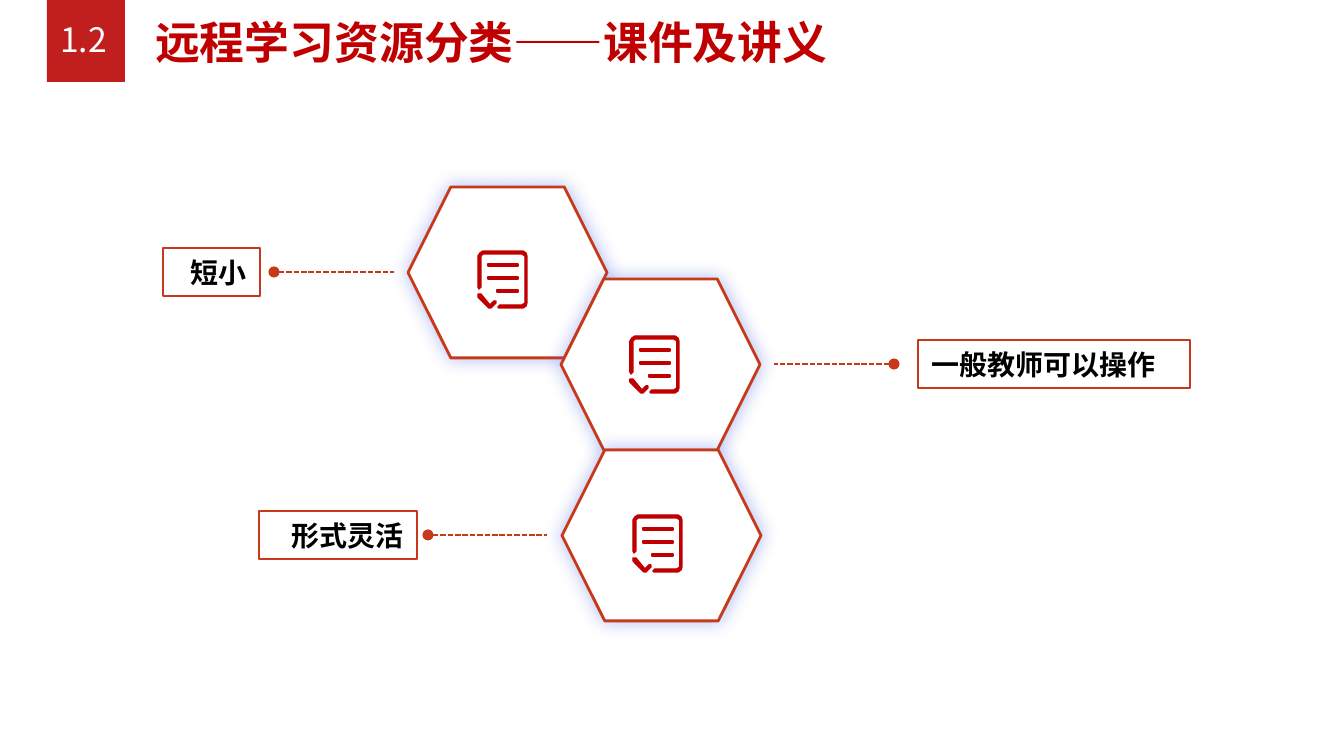
from lxml import etree
from pptx import Presentation
from pptx import util as u
from pptx.dml.color import RGBColor
from pptx.enum import dml, shapes, text
from pptx.oxml import ns

PX = u.Inches(10) / 1344
FONT = "Noto Sans CJK SC"
COLORS = {"white": "FFFFFF", "black": "000000", "title": "C00000",
          "badge": "C11E1E", "outline": "C73A19", "glow": "3C5CE8"}


def px(*lengths):
    return [u.Emu(round(length * PX)) for length in lengths]


def add_box(box, wording, size, color, bold, align, fill=None, outline=None):
    """Add a rectangle with one line of text, centred vertically."""
    shape = slide.shapes.add_shape(shapes.MSO_SHAPE.RECTANGLE, *px(*box))
    shape.shadow.inherit = False
    for part, part_color in ((shape.fill, fill), (shape.line.fill, outline)):
        if part_color:
            part.solid()
            part.fore_color.rgb = RGBColor.from_string(COLORS[part_color])
        else:
            part.background()
    if outline:
        shape.line.width = u.Pt(0.75)
    frame = shape.text_frame
    frame_format = {"word_wrap": True, "margin_top": 0, "margin_bottom": 0,
                    "vertical_anchor": text.MSO_ANCHOR.MIDDLE}
    for name, value in frame_format.items():
        setattr(frame, name, value)
    paragraph = frame.paragraphs[0]
    paragraph.alignment = align
    run = paragraph.add_run()
    run.text = wording
    run_format = {"name": FONT, "size": u.Pt(size), "bold": bold}
    for name, value in run_format.items():
        setattr(run.font, name, value)
    run.font.color.rgb = RGBColor.from_string(COLORS[color])
    etree.SubElement(run.font._element, ns.qn("a:ea"), typeface=FONT)


presentation = Presentation()
presentation.slide_width, presentation.slide_height = px(1344, 756)
slide = presentation.slides.add_slide(presentation.slide_layouts[6])
slide.background.fill.solid()
slide.background.fill.fore_color.rgb = RGBColor.from_string(COLORS["white"])

# Title and section number
JUSTIFY, LEFT, RIGHT = (text.PP_ALIGN.JUSTIFY, text.PP_ALIGN.LEFT,
                        text.PP_ALIGN.RIGHT)
add_box((142, 8, 981, 67), "远程学习资源分类——课件及讲义", 24, "title", True, JUSTIFY)
add_box((47, -3, 78, 85), "1.2", 18, "white", False, JUSTIFY, fill="badge")

# Document icon: page outline, three text lines and a check mark
ICON = [
    [(21, 57), (45, 57), (48, 55), (49, 52), (49, 5), (48, 2), (45, 0),
     (5, 0), (2, 2), (0, 5), (0, 36), (1, 38), (3, 36), (3, 5), (5, 3),
     (44, 3), (47, 5), (47, 52), (44, 54), (22, 54), (20, 56)],
    [(0, 43), (3, 43), (12, 54), (16, 50), (18, 50), (18, 52), (13, 57),
     (11, 57), (0, 46)],
]
for left, top in ((10, 13), (10, 26), (19, 39)):
    ICON.append([(left, top), (40, top), (40, top + 2), (left, top + 2)])

# Hexagon corner, icon corner, dot x, line end x, label x and width, wording
ROWS = [
    ((408, 187), (478, 251), 274, 394, 163, 97, "短小", RIGHT),
    ((561, 279), (630, 336), 894, 774, 918, 272, "一般教师可以操作", LEFT),
    ((562, 450), (633, 515), 428, 547, 259, 158, "形式灵活", RIGHT),
]
HEX_WIDTH, HEX_HEIGHT, LABEL_HEIGHT = 199, 171, 48

for hex_corner, icon_corner, dot, end, label, width, wording, align in ROWS:
    middle = hex_corner[1] + HEX_HEIGHT // 2

    # Hexagon with a soft glow-like shadow
    hexagon = slide.shapes.add_shape(
        shapes.MSO_SHAPE.HEXAGON, *px(*hex_corner, HEX_WIDTH, HEX_HEIGHT))
    hexagon.fill.solid()
    hexagon.fill.fore_color.rgb = RGBColor.from_string(COLORS["white"])
    hexagon.line.color.rgb = RGBColor.from_string(COLORS["outline"])
    hexagon.line.width = u.Pt(1.5)
    hexagon.shadow.inherit = False
    effects = hexagon._element.spPr.find(ns.qn("a:effectLst"))
    shadow = etree.SubElement(effects, ns.qn("a:outerShdw"), algn="ctr",
                              blurRad=str(u.Pt(10)), dist="0", dir="0",
                              rotWithShape="0")
    glow = etree.SubElement(shadow, ns.qn("a:srgbClr"), val=COLORS["glow"])
    etree.SubElement(glow, ns.qn("a:alpha"), val="40000")

    # Dashed pointer with a dot beside the label
    pointer = slide.shapes.add_connector(
        shapes.MSO_CONNECTOR.STRAIGHT, *px(dot, middle, end, middle))
    pointer.line.color.rgb = RGBColor.from_string(COLORS["outline"])
    pointer.line.width = u.Pt(1)
    pointer.line.dash_style = dml.MSO_LINE.SQUARE_DOT
    etree.SubElement(pointer.line._get_or_add_ln(), ns.qn("a:headEnd"),
                     type="oval")
    etree.SubElement(pointer._element.spPr, ns.qn("a:effectLst"))

    # Label
    add_box((label, middle - LABEL_HEIGHT // 2, width, LABEL_HEIGHT),
            wording, 15, "black", True, align, outline="outline")

    # Icon
    x, y = icon_corner
    contours = [[(x + dx, y + dy) for dx, dy in contour] for contour in ICON]
    builder = slide.shapes.build_freeform(*contours[0][0], scale=PX)
    builder.add_line_segments(contours[0][1:], close=True)
    for contour in contours[1:]:
        builder.move_to(*contour[0])
        builder.add_line_segments(contour[1:], close=True)
    icon = builder.convert_to_shape()
    icon.shadow.inherit = False
    icon.fill.solid()
    icon.fill.fore_color.rgb = RGBColor.from_string(COLORS["title"])
    icon.line.color.rgb = RGBColor.from_string(COLORS["title"])
    icon.line.width = u.Pt(0.75)

presentation.save("out.pptx")
